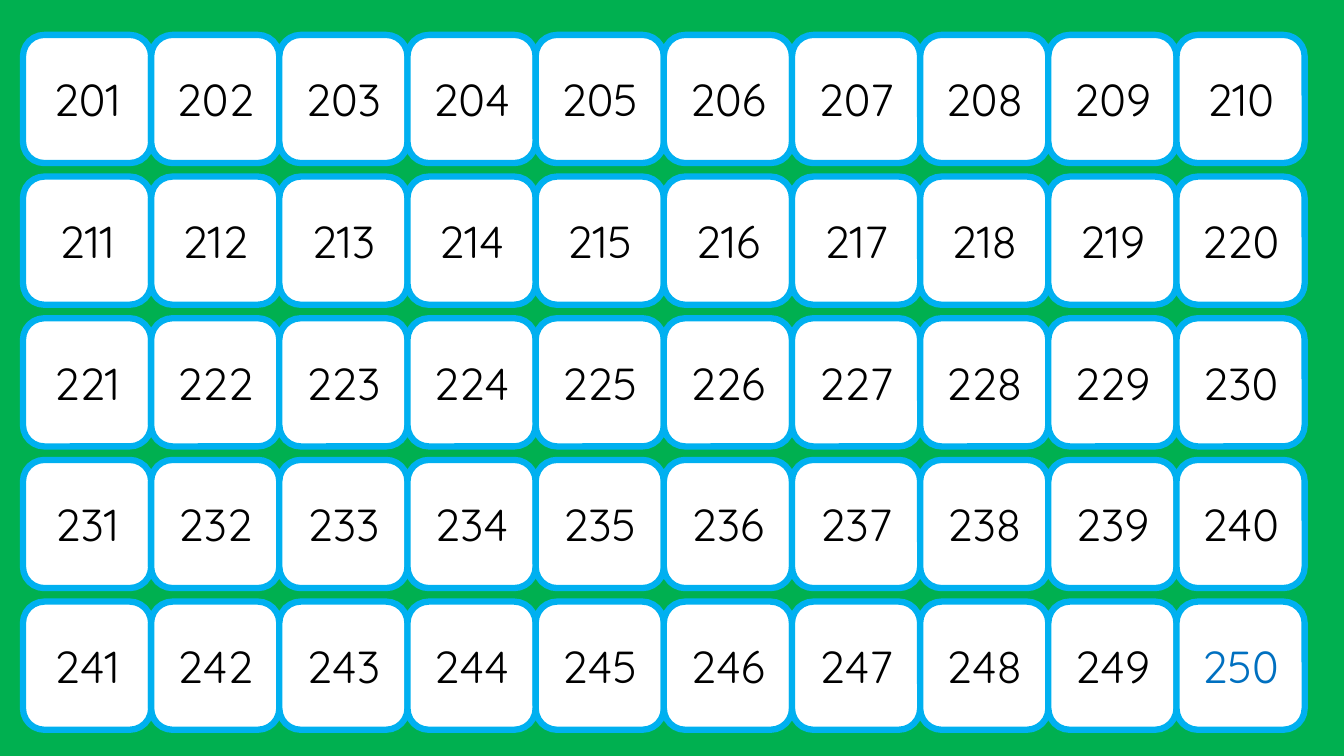
import dataclasses

import pptx
import pptx.dml.color
import pptx.enum.shapes
import pptx.enum.text
import pptx.slide
import pptx.util

Cm = pptx.util.Cm
FIRST, ROWS, COLS = 201, 5, 10
LEFT, TOP = 0.58, 0.88
SIDE, STEP = 3.23, 3.57  # tile side and column pitch; row pitch


@dataclasses.dataclass
class Tile:
    num: int
    left: float
    top: float
    ink: str = "000000"


def rgb(code: str) -> pptx.dml.color.RGBColor:
    return pptx.dml.color.RGBColor.from_string(code)


def draw(slide: pptx.slide.Slide, tile: Tile) -> None:
    box = slide.shapes.add_shape(
        pptx.enum.shapes.MSO_SHAPE.ROUNDED_RECTANGLE,
        Cm(tile.left), Cm(tile.top), Cm(SIDE), Cm(SIDE))
    box.shadow.inherit = False
    box.fill.solid()
    box.fill.fore_color.rgb = rgb("FFFFFF")
    box.line.color.rgb = rgb("00B0F0")
    box.line.width = pptx.util.Pt(4.5)

    frame = box.text_frame
    frame.vertical_anchor = pptx.enum.text.MSO_ANCHOR.MIDDLE
    para = frame.paragraphs[0]
    para.alignment = pptx.enum.text.PP_ALIGN.CENTER
    run = para.add_run()
    run.text = str(tile.num)
    run.font.name = "Quicksand"
    run.font.size = pptx.util.Pt(32)
    run.font.color.rgb = rgb(tile.ink)


def main() -> None:
    # Slide and background
    deck = pptx.Presentation()
    deck.slide_width, deck.slide_height = Cm(33.87), Cm(19.05)
    slide = deck.slides.add_slide(deck.slide_layouts[6])
    slide.background.fill.solid()
    slide.background.fill.fore_color.rgb = rgb("00B050")

    # Number grid, with the last number in blue
    tiles = [Tile(FIRST + row * COLS + col, LEFT + col * SIDE, TOP + row * STEP)
             for row in range(ROWS) for col in range(COLS)]
    tiles[-1].ink = "0070C0"
    for tile in tiles:
        draw(slide, tile)

    deck.save("out.pptx")


if __name__ == "__main__":
    main()
